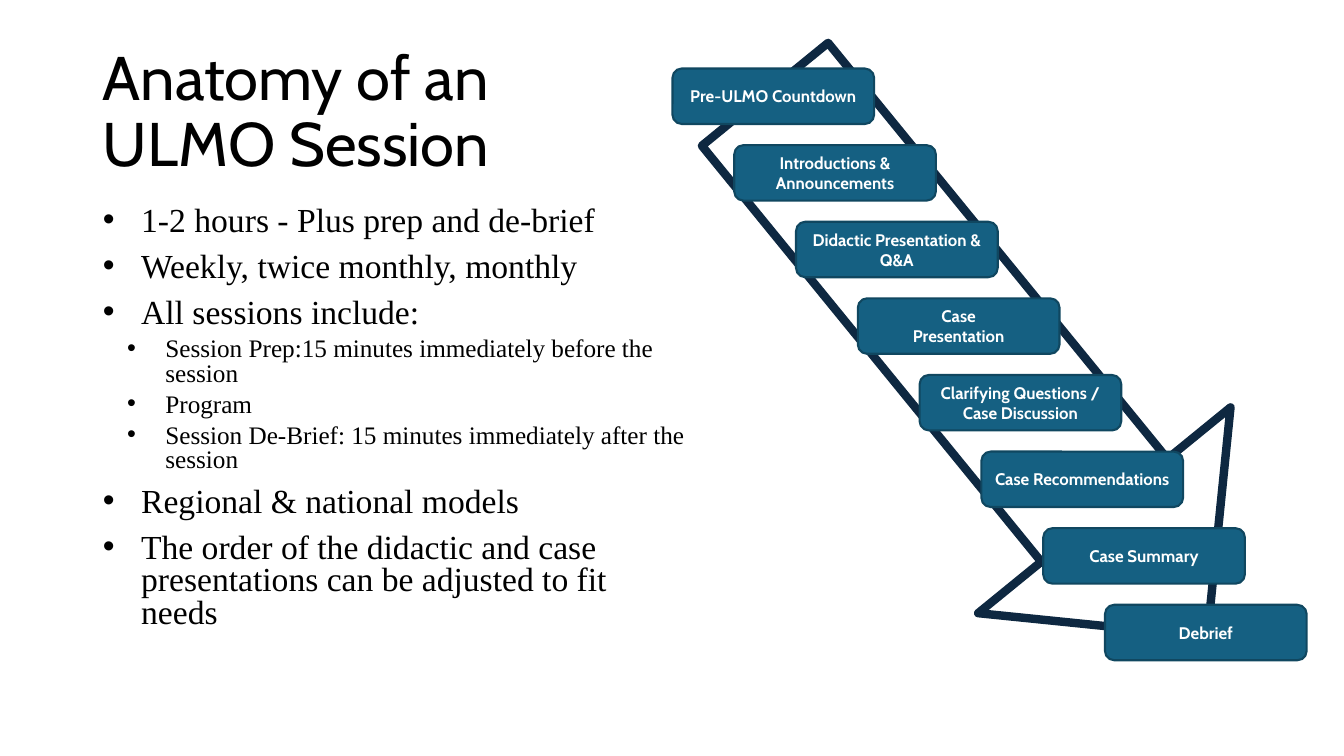
from pptx import Presentation, util as u
from pptx.dml.color import RGBColor
from pptx.enum import shapes, text
from pptx.oxml.ns import qn
from lxml import etree

HEADING_FONT = "Cabin"
BODY_FONT = "Times New Roman"

TITLE = "Anatomy of an \vULMO Session"
POINTS = [
    (0, "1-2 hours - Plus prep and de-brief"),
    (0, "Weekly, twice monthly, monthly"),
    (0, "All sessions include:"),
    (1, "Session Prep:15 minutes immediately before the session"),
    (1, "Program"),
    (1, "Session De-Brief: 15 minutes immediately after the session"),
    (0, "Regional & national models"),
    (0, "The order of the didactic and case presentations can be adjusted to fit needs"),
]
STEPS = [
    "Pre-ULMO Countdown",
    "Introductions & Announcements",
    "Didactic Presentation & Q&A",
    "Case\nPresentation",
    "Clarifying Questions /\nCase Discussion",
    "Case Recommendations",
    "Case Summary",
    "Debrief",
]


def color(value):
    return RGBColor.from_string(value)


def place(shape, left, top, width, height):
    shape.left, shape.top = u.Inches(left), u.Inches(top)
    shape.width, shape.height = u.Inches(width), u.Inches(height)


def format_font(font, name, size, fill="000000", bold=False):
    font.name, font.size, font.bold = name, u.Pt(size), bold
    font.color.rgb = color(fill)


def add_bullet(para, indent, hanging):
    properties = para._p.get_or_add_pPr()
    properties.set("marL", str(u.Inches(indent)))
    properties.set("indent", str(-u.Inches(hanging)))
    etree.SubElement(properties, qn("a:buFont")).set("typeface", "Arial")
    etree.SubElement(properties, qn("a:buChar")).set("char", "•")


def fill_title(title):
    place(title, 0.92, 0.4, 11.5, 1.45)
    frame = title.text_frame
    frame.auto_size = text.MSO_AUTO_SIZE.NONE
    frame.vertical_anchor = text.MSO_ANCHOR.MIDDLE
    para = frame.paragraphs[0]
    para.text = TITLE
    para.alignment = text.PP_ALIGN.LEFT
    para.line_spacing = 0.9
    for span in para.runs:
        format_font(span.font, HEADING_FONT, 44)


def fill_points(body):
    place(body, 0.92, 2, 5.99, 4.59)
    frame = body.text_frame
    frame.auto_size = text.MSO_AUTO_SIZE.NONE
    for index, (level, words) in enumerate(POINTS):
        para = frame.add_paragraph() if index else frame.paragraphs[0]
        para.level = level
        para.line_spacing = 0.8
        para.space_before = u.Pt((5 if level else 10) if index else 0)
        add_bullet(para, 0.62 if level else 0.38, 0.38)
        span = para.add_run()
        span.text = words
        format_font(span.font, BODY_FONT, 18 if level else 24)


def add_outlined(page, kind, box, line, weight):
    shape = page.shapes.add_shape(kind, *map(u.Inches, box))
    shape.shadow.inherit = False
    shape.line.color.rgb = color(line)
    shape.line.width = u.Pt(weight)
    return shape


def add_arrow(page):
    arrow = add_outlined(page, shapes.MSO_SHAPE.RIGHT_ARROW,
                         (6.31, 2.01, 6.94, 3.23), "0E2841", 6)
    arrow.fill.background()
    arrow.rotation = 50.8


def add_step(page, left, top, words):
    step = add_outlined(page, shapes.MSO_SHAPE.ROUNDED_RECTANGLE,
                        (left, top, 2, 0.55), "104760", 1.5)
    step.fill.solid()
    step.fill.fore_color.rgb = color("156082")
    frame = step.text_frame
    frame.word_wrap = True
    frame.vertical_anchor = text.MSO_ANCHOR.MIDDLE
    frame.margin_left = frame.margin_right = u.Inches(0.05)
    frame.margin_top = frame.margin_bottom = u.Inches(0.05)
    frame.text = words
    for para in frame.paragraphs:
        para.alignment = text.PP_ALIGN.CENTER
        for span in para.runs:
            format_font(span.font, HEADING_FONT, 12, "FFFFFF", bold=True)


def main():
    deck = Presentation()
    deck.slide_width, deck.slide_height = u.Inches(13.33), u.Inches(7.5)
    page = deck.slides.add_slide(deck.slide_layouts[1])
    fill_title(page.shapes.title)
    fill_points(page.placeholders[1])
    add_arrow(page)
    first_left, last_left = 6.67, 10.96
    stride = (last_left - first_left) / (len(STEPS) - 1)
    for index, words in enumerate(STEPS):
        add_step(page, first_left + index * stride, 0.68 + index * 0.76, words)
    deck.save("out.pptx")


if __name__ == "__main__":
    main()
